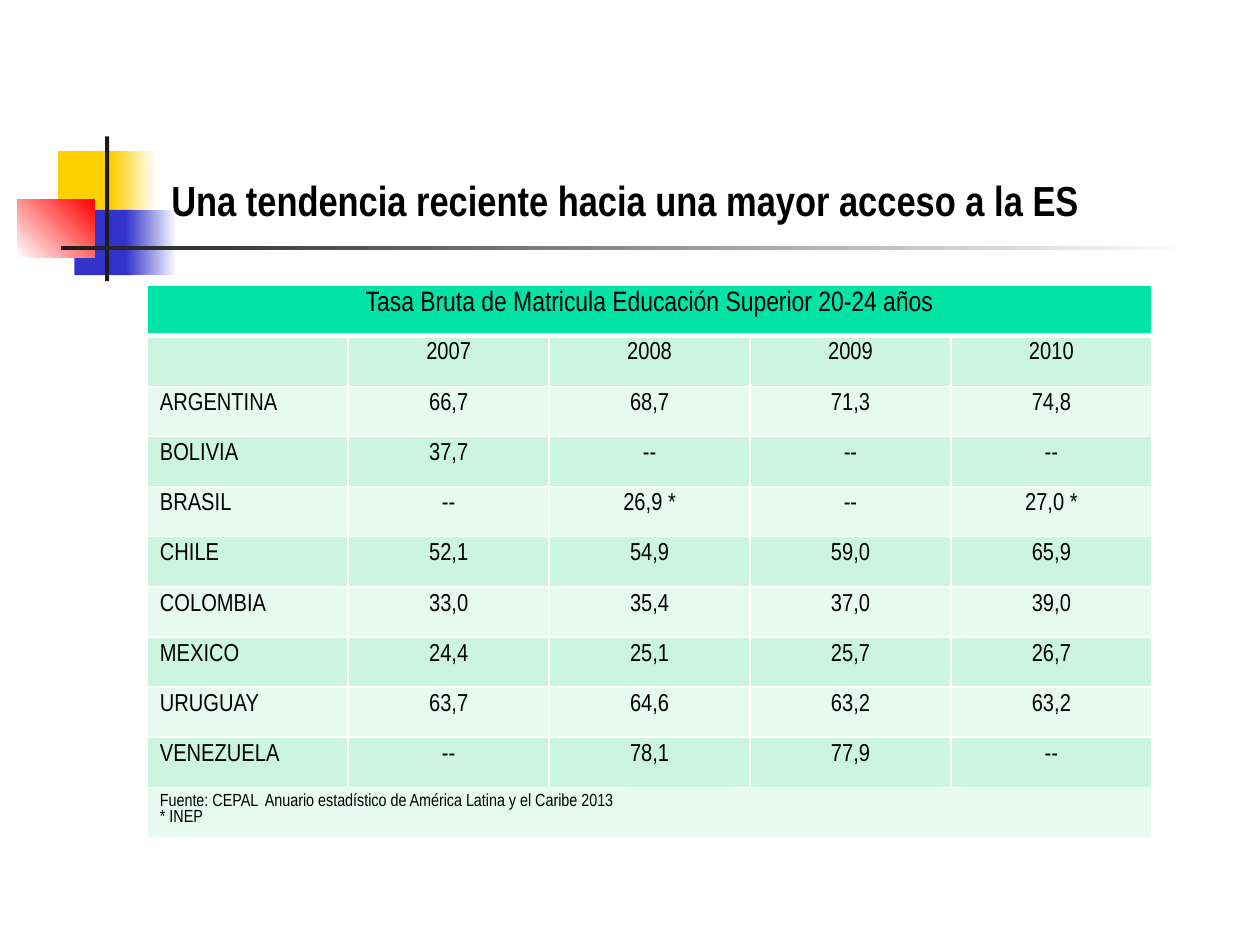
from pptx import Presentation
from pptx.dml.color import RGBColor
from pptx.enum.shapes import MSO_SHAPE
from pptx.enum.text import MSO_ANCHOR, PP_ALIGN
from pptx.oxml.ns import qn
from pptx.util import Cm, Pt
from lxml import etree

RECT = MSO_SHAPE.RECTANGLE
LEFT, MID = PP_ALIGN.LEFT, PP_ALIGN.CENTER
BOTTOM = MSO_ANCHOR.BOTTOM
FONT = "Arial Narrow"
GOLD, BLUE, RED = "FFCF01", "3333CC", "FF0000"
BLACK, DARK, WHITE = "000000", "1C1C1C", "FFFFFF"
HEAD, BANDS = "00E4A8", ("CCF5E1", "E7FAF1")
BLOCKS = [
    (1.17, 3.05, 1.22, 1.32, GOLD, None, 0),
    (2.24, 3.05, 0.91, 1.32, GOLD, WHITE, 0),
    (1.5, 4.23, 1.17, 1.32, BLUE, None, 0),
    (2.54, 4.23, 1.02, 1.32, BLUE, WHITE, 0),
    (0.35, 4.02, 1.55, 1.17, WHITE, RED, 45),
    (2.12, 2.75, 0.08, 2.92, DARK, None, 0),
    (1.23, 4.95, 22.86, 0.09, DARK, WHITE, 0),
]
TITLE = "Una tendencia reciente hacia una mayor acceso a la ES"
TOPIC = "Tasa Bruta de Matricula Educación Superior 20-24 años"
SOURCE = "Fuente: CEPAL  Anuario estadístico de América Latina y el Caribe 2013\n* INEP"
RATES = [
    ("", "2007", "2008", "2009", "2010"),
    ("ARGENTINA", "66,7", "68,7", "71,3", "74,8"),
    ("BOLIVIA", "37,7", "--", "--", "--"),
    ("BRASIL", "--", "26,9 *", "--", "27,0 *"),
    ("CHILE", "52,1", "54,9", "59,0", "65,9"),
    ("COLOMBIA", "33,0", "35,4", "37,0", "39,0"),
    ("MEXICO", "24,4", "25,1", "25,7", "26,7"),
    ("URUGUAY", "63,7", "64,6", "63,2", "63,2"),
    ("VENEZUELA", "--", "78,1", "77,9", "--"),
]


def color(code):
    """Turn a hex string into a colour."""
    return RGBColor.from_string(code)


def write(frame, text, size, align, bold=False):
    """Put styled text into a text frame."""
    frame.text = text
    for para in frame.paragraphs:
        para.alignment = align
        for run in para.runs:
            run.font.name = FONT
            run.font.size = Pt(size)
            run.font.bold = bold
            run.font.color.rgb = color(BLACK)


def add_block(slide, left, top, width, height, start, end, angle):
    """Add a rectangle, plain or fading from start to end."""
    block = slide.shapes.add_shape(RECT, Cm(left), Cm(top), Cm(width), Cm(height))
    block.shadow.inherit = False
    block.line.fill.background()
    if end is None:
        block.fill.solid()
        block.fill.fore_color.rgb = color(start)
        return
    block.fill.gradient()
    block.fill.gradient_angle = angle
    for stop, code in zip(block.fill.gradient_stops, (start, end)):
        stop.color.rgb = color(code)


def add_title(slide):
    """Place and format the title above the blocks."""
    title = slide.shapes.title
    title.left, title.top = Cm(3.2), Cm(2.2)
    title.width, title.height = Cm(21.64), Cm(2.46)
    write(title.text_frame, TITLE, 24, LEFT, bold=True)
    title.text_frame.vertical_anchor = BOTTOM
    slide.shapes._spTree.append(title._element)


def set_edges(cell, top, bottom):
    """Give a cell white borders, with top and bottom widths in points."""
    props = cell._tc.get_or_add_tcPr()
    for side, width in (("L", 1), ("R", 1), ("T", top), ("B", bottom)):
        line = etree.SubElement(props, qn(f"a:ln{side}"), w=str(Pt(width)))
        fill = etree.SubElement(line, qn("a:solidFill"))
        etree.SubElement(fill, qn("a:srgbClr"), val=WHITE)


def fill_row(table, index, texts, size, code, aligns):
    """Write one table row with its fill and borders."""
    top, bottom = (3 if index == 1 else 1), (3 if index == 0 else 1)
    for cell in table.rows[index].cells:
        set_edges(cell, top, bottom)
        cell.fill.solid()
        cell.fill.fore_color.rgb = color(code)
    if len(texts) == 1:
        table.cell(index, 0).merge(table.cell(index, len(table.columns) - 1))
    for col, (text, align) in enumerate(zip(texts, aligns)):
        write(table.cell(index, col).text_frame, text, size, align)


def add_rates(slide):
    """Add the table of enrolment rates."""
    count, width = len(RATES) + 2, len(RATES[0])
    frame = slide.shapes.add_table(
        count, width, Cm(2.97), Cm(5.75), Cm(20.25), Cm(11.11))
    table = frame.table
    for row in table.rows:
        row.height = Cm(1.01)
    fill_row(table, 0, [TOPIC], 16, HEAD, [MID])
    for index, texts in enumerate(RATES, 1):
        aligns = [LEFT] + [MID] * (width - 1)
        fill_row(table, index, texts, 14, BANDS[(index - 1) % 2], aligns)
    fill_row(table, count - 1, [SOURCE], 10, BANDS[1], [LEFT])


def main():
    """Build and save the slide."""
    deck = Presentation()
    deck.slide_width, deck.slide_height = Cm(25.4), Cm(19.05)
    slide = deck.slides.add_slide(deck.slide_layouts[5])
    for block in BLOCKS:
        add_block(slide, *block)
    add_title(slide)
    add_rates(slide)
    deck.save("out.pptx")


if __name__ == "__main__":
    main()
